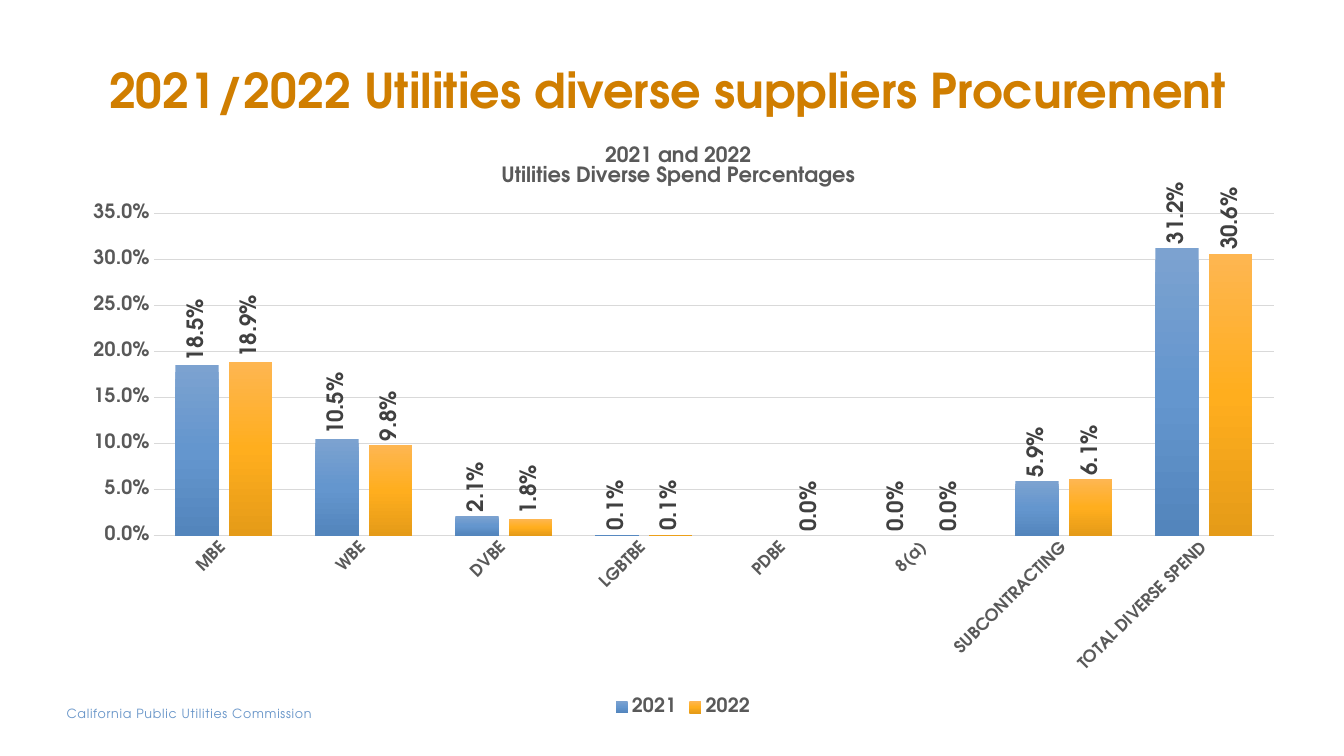
from pptx import Presentation
from pptx.chart.data import CategoryChartData
from pptx.dml.color import RGBColor
from pptx.enum.chart import XL_CHART_TYPE, XL_LABEL_POSITION, XL_LEGEND_POSITION, XL_TICK_MARK
from pptx.enum.text import MSO_ANCHOR, PP_ALIGN
from pptx.oxml import parse_xml
from pptx.oxml.ns import nsdecls, qn
from pptx.util import Inches, Pt

FACE = "TeX Gyre Adventor"
ORANGE = RGBColor(0xD0, 0x7E, 0x00)
BLUE = RGBColor(0x69, 0x96, 0xC9)
GREY = RGBColor(0x59, 0x59, 0x59)
DARK = RGBColor(0x40, 0x40, 0x40)
PALE = RGBColor(0xD9, 0xD9, 0xD9)
BLACK = RGBColor(0, 0, 0)
BLUES = [RGBColor(0x7C, 0xA2, 0xD0), RGBColor(0x64, 0x96, 0xCE), RGBColor(0x53, 0x85, 0xBC)]
GOLDS = [RGBColor(0xFE, 0xB6, 0x51), RGBColor(0xFF, 0xAE, 0x1E), RGBColor(0xE5, 0x9B, 0x18)]


def style(font, size, color, bold=True):
    font.name = FACE
    font.size = Pt(size)
    font.bold = bold
    font.color.rgb = color


def layout(parent, index, **spots):
    for old in parent.findall(qn("c:layout")):
        parent.remove(old)
    inner = '<c:layoutTarget val="inner"/>' if "w" in spots else ""
    modes = "".join(f'<c:{key}Mode val="edge"/>' for key in "xy")
    sizes = "".join(f'<c:{key} val="{val}"/>' for key, val in spots.items())
    parent.insert(index, parse_xml(
        f'<c:layout {nsdecls("c")}><c:manualLayout>{inner}{modes}{sizes}'
        '</c:manualLayout></c:layout>'))


deck = Presentation()
deck.slide_width = Inches(13.33)
deck.slide_height = Inches(7.5)
slide = deck.slides.add_slide(deck.slide_layouts[6])

foot = slide.shapes.add_textbox(Inches(0.66), Inches(7), Inches(3.21), Inches(0.15)).text_frame
foot.word_wrap = True
foot.margin_left = foot.margin_right = foot.margin_top = foot.margin_bottom = 0
run = foot.paragraphs[0].add_run()
run.text = "California Public Utilities Commission"
style(run.font, 9, BLUE, False)
run.font._element.set("spc", "50")

head = slide.shapes.add_textbox(Inches(0.67), Inches(0.35), Inches(12), Inches(0.88)).text_frame
head.word_wrap = True
head.vertical_anchor = MSO_ANCHOR.BOTTOM
head.margin_left = 0
para = head.paragraphs[0]
para.alignment = PP_ALIGN.CENTER
para.line_spacing = 0.9
run = para.add_run()
run.text = "2021/2022 Utilities diverse suppliers Procurement"
style(run.font, 34.2, ORANGE)

data = CategoryChartData(number_format="0.0%")
data.categories = ["MBE", "WBE", "DVBE", "LGBTBE", "PDBE", "8(a)",
                   "SUBCONTRACTING", "TOTAL DIVERSE SPEND"]
data.add_series("2021", [0.185, 0.105, 0.021, 0.001, None, 0, 0.059, 0.312])
data.add_series("2022", [0.189, 0.098, 0.018, 0.001, 0, 0, 0.061, 0.306])
chart = slide.shapes.add_chart(XL_CHART_TYPE.COLUMN_CLUSTERED, Inches(0.67), Inches(1.23),
                               Inches(12.21), Inches(5.92), data).chart
style(chart.font, 10, BLACK, False)

chart.has_title = True
title = chart.chart_title
title.include_in_layout = False
frame = title.text_frame
for num, line in enumerate(["2021 and 2022", "Utilities Diverse Spend Percentages"]):
    para = frame.add_paragraph() if num else frame.paragraphs[0]
    para.alignment = PP_ALIGN.CENTER
    para.line_spacing = 0.8
    run = para.add_run()
    run.text = line
    style(run.font, 15, GREY)
layout(title._element, 1, x=0.35, y=0.03)

chart.has_legend = True
chart.legend.position = XL_LEGEND_POSITION.BOTTOM
chart.legend.include_in_layout = False
style(chart.legend.font, 14, GREY)

cats = chart.category_axis
cats.major_tick_mark = XL_TICK_MARK.NONE
cats.format.line.color.rgb = PALE
cats.format.line.width = Pt(1)
style(cats.tick_labels.font, 12, GREY)
cats._element.find(qn("c:txPr")).find(qn("a:bodyPr")).set("rot", "-2700000")

vals = chart.value_axis
vals.minimum_scale = 0
vals.maximum_scale = 0.35
vals.major_unit = 0.05
vals.major_tick_mark = XL_TICK_MARK.NONE
vals.format.line.fill.background()
vals.major_gridlines.format.line.color.rgb = PALE
vals.major_gridlines.format.line.width = Pt(0.75)
vals.tick_labels.number_format = "0.0%"
vals.tick_labels.number_format_is_linked = False
style(vals.tick_labels.font, 14, GREY)

plot = chart.plots[0]
plot.gap_width = 100
plot.overlap = -24
plot.vary_by_categories = False
for bars, tones in zip(plot.series, [BLUES, GOLDS]):
    bars.invert_if_negative = False
    stops = "".join(f'<a:gs pos="{num * 50000}"><a:srgbClr val="{tone}"/></a:gs>'
                    for num, tone in enumerate(tones))
    bars.format.fill.background()
    props = bars._element.find(qn("c:spPr"))
    props.replace(props.find(qn("a:noFill")), parse_xml(
        f'<a:gradFill {nsdecls("a")} rotWithShape="1"><a:gsLst>{stops}</a:gsLst>'
        '<a:lin ang="5400000" scaled="0"/></a:gradFill>'))
    tags = bars.data_labels
    tags.show_value = True
    tags.position = XL_LABEL_POSITION.OUTSIDE_END
    tags.number_format = "0.0%"
    tags.number_format_is_linked = False
    style(tags.font, 16, DARK)
    tags._element.find(qn("c:txPr")).find(qn("a:bodyPr")).set("rot", "-5400000")

layout(chart._chartSpace.chart.plotArea, 0, x=0.07, y=0.15, w=0.91, h=0.54)

deck.save("out.pptx")
